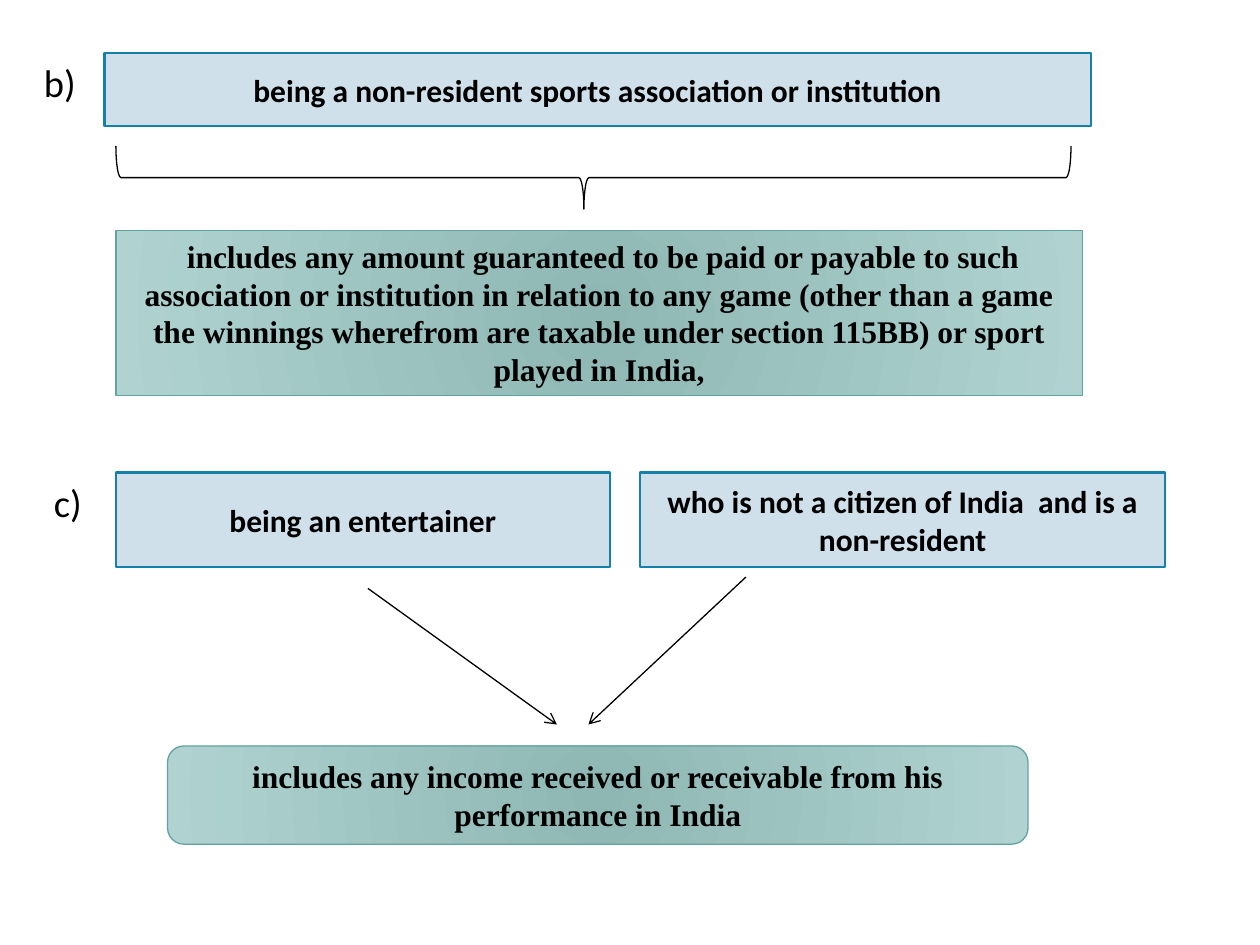
from dataclasses import dataclass

from lxml import etree
from pptx import Presentation
from pptx import util as u
from pptx.dml.color import RGBColor
from pptx.enum import shapes, text
from pptx.oxml.ns import qn

Inches = u.Inches


@dataclass(frozen=True)
class Theme:
    ink: str = "000000"
    condition_fill: str = "CFE0EA"
    condition_line: str = "1580A9"
    income_inner: str = "8EB7B4"
    income_outer: str = "B0D3D1"
    income_line: str = "62A39F"
    sans: str = "Calibri"
    serif: str = "Times New Roman"
    label_size: int = 22
    body_size: int = 18
    thin: float = 0.75
    medium: float = 1.25


THEME = Theme()
FIT = text.MSO_AUTO_SIZE.SHAPE_TO_FIT_TEXT
ANCHOR = text.MSO_ANCHOR
RECTANGLE = shapes.MSO_SHAPE.RECTANGLE


def set_format(target, values):
    for name, value in values.items():
        setattr(target, name, value)


def inside(box, left, top, width, height):
    return box[0] + left, box[1] + top, width, height


def lengths(box):
    return [Inches(value) for value in box]


def write(shape, wording, font, frame, alignment):
    set_format(shape.text_frame, {"word_wrap": True, **frame})
    paragraph = shape.text_frame.paragraphs[0]
    paragraph.alignment = alignment
    run = paragraph.add_run()
    run.text = wording
    set_format(run.font, font)
    run.font.color.rgb = RGBColor.from_string(THEME.ink)


def draw_line(line, color, width):
    line.color.rgb = RGBColor.from_string(color)
    line.width = u.Pt(width)


def add_label(slide, box, wording):
    label = slide.shapes.add_textbox(*lengths(box))
    font = {"name": THEME.sans, "size": u.Pt(THEME.label_size)}
    write(label, wording, font, {"auto_size": FIT}, text.PP_ALIGN.LEFT)


def add_panel(slide, box, wording, kind, line, font_name, frame):
    panel = slide.shapes.add_shape(kind, *lengths(box))
    panel.shadow.inherit = False
    draw_line(panel.line, *line)
    font = {"name": font_name, "size": u.Pt(THEME.body_size), "bold": True}
    write(panel, wording, font, frame, text.PP_ALIGN.CENTER)
    return panel


def add_condition(slide, box, wording):
    panel = add_panel(slide, box, wording, RECTANGLE,
                      (THEME.condition_line, THEME.medium), THEME.sans,
                      {"vertical_anchor": ANCHOR.MIDDLE})
    panel.fill.solid()
    panel.fill.fore_color.rgb = RGBColor.from_string(THEME.condition_fill)


def add_income(slide, box, wording, kind=RECTANGLE):
    panel = add_panel(slide, box, wording, kind,
                      (THEME.income_line, THEME.thin), THEME.serif,
                      {"vertical_anchor": ANCHOR.TOP, "auto_size": FIT})
    panel.fill.gradient()
    colors = (THEME.income_inner, THEME.income_outer)
    for stop, color, position in zip(panel.fill.gradient_stops, colors, (0, 1)):
        stop.color.rgb = RGBColor.from_string(color)
        stop.position = position
    gradient = panel.element.spPr.find(qn("a:gradFill"))
    gradient.remove(gradient.find(qn("a:lin")))
    circle = etree.SubElement(gradient, qn("a:path"), {"path": "circle"})
    etree.SubElement(circle, qn("a:fillToRect"), dict.fromkeys("ltrb", "100000"))


def add_brace(slide, box):
    left, top, width, height = box
    shift = (width - height) / 2
    brace = slide.shapes.add_shape(
        shapes.MSO_SHAPE.LEFT_BRACE,
        *lengths((left + shift, top - shift, height, width)))
    brace.rotation = 270
    brace.adjustments[0] = 0.08
    brace.adjustments[1] = 0.49
    brace.shadow.inherit = False
    brace.fill.background()
    draw_line(brace.line, THEME.ink, THEME.thin)


def add_arrow(slide, start, end):
    arrow = slide.shapes.add_connector(
        shapes.MSO_CONNECTOR.STRAIGHT, *lengths(start + end))
    draw_line(arrow.line, THEME.ink, THEME.thin)
    properties = arrow._element.spPr
    etree.SubElement(properties.find(qn("a:ln")), qn("a:tailEnd"), {"type": "arrow"})
    etree.SubElement(properties, qn("a:effectLst"))


def add_association(slide, box):
    add_label(slide, inside(box, 0, 0, 0.5, 0.47), "b)")
    add_condition(slide, inside(box, 0.58, 0, 7.83, 0.58),
                  "being a non-resident sports association or institution")
    add_brace(slide, inside(box, 0.67, 0.74, 7.58, 0.5))
    add_income(slide, inside(box, 0.67, 1.41, 7.67, 1.31),
               " includes any amount guaranteed to be paid or payable to such "
               "association or institution in relation to any game (other than "
               "a game the winnings wherefrom are taxable under section 115BB) "
               "or sport played in India,")


def add_entertainer(slide, box):
    left, top = box[:2]
    add_label(slide, inside(box, 0, 0, 0.58, 0.47), "c)")
    add_condition(slide, inside(box, 0.59, 0, 3.92, 0.75), "being an entertainer")
    add_condition(slide, inside(box, 4.75, 0, 4.17, 0.75),
                  "who is not a citizen of India  and is a non-resident")
    for start_x, start_y, end_x in ((2.59, 0.92, 4.09), (5.59, 0.83, 4.34)):
        add_arrow(slide, (left + start_x, top + start_y), (left + end_x, top + 2))
    add_income(slide, inside(box, 1, 2.17, 6.83, 0.78),
               "includes any income received or receivable from his "
               "performance in India", shapes.MSO_SHAPE.ROUNDED_RECTANGLE)


def main():
    presentation = Presentation()
    set_format(presentation, {"slide_width": Inches(10), "slide_height": Inches(7.5)})
    slide = presentation.slides.add_slide(presentation.slide_layouts[6])
    add_association(slide, (0.25, 0.42, 8.42, 2.72))
    add_entertainer(slide, (0.33, 3.75, 8.92, 2.95))
    presentation.save("out.pptx")


if __name__ == "__main__":
    main()
